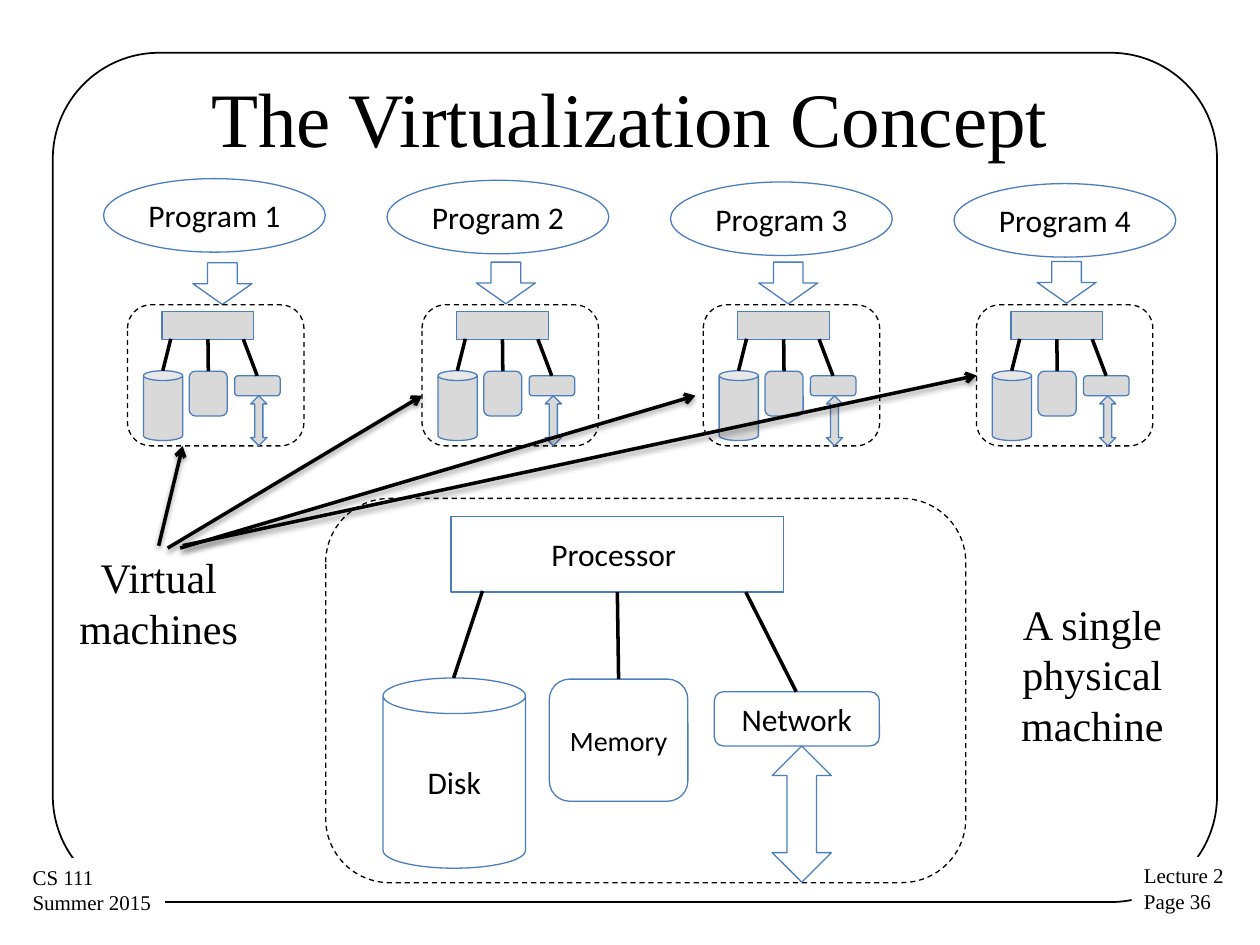
from dataclasses import dataclass

from lxml import etree
from pptx import Presentation
from pptx.dml.color import RGBColor
from pptx.enum.dml import MSO_LINE
from pptx.enum.shapes import MSO_CONNECTOR, MSO_SHAPE
from pptx.enum.text import MSO_ANCHOR, PP_ALIGN
from pptx.oxml.ns import qn
from pptx.util import Pt

RECT, ROUND = MSO_SHAPE.RECTANGLE, MSO_SHAPE.ROUNDED_RECTANGLE
OVAL, CAN = MSO_SHAPE.OVAL, MSO_SHAPE.CAN
DOWN, UP_DOWN = MSO_SHAPE.DOWN_ARROW, MSO_SHAPE.UP_DOWN_ARROW
STRAIGHT, DASH = MSO_CONNECTOR.STRAIGHT, MSO_LINE.DASH
LEFT, CENTER = PP_ALIGN.LEFT, PP_ALIGN.CENTER
MIDDLE, TOP = MSO_ANCHOR.MIDDLE, MSO_ANCHOR.TOP

BLACK = RGBColor(0x00, 0x00, 0x00)
WHITE = RGBColor(0xFF, 0xFF, 0xFF)
GRAY = RGBColor(0xD9, 0xD9, 0xD9)
BLUE = RGBColor(0x4B, 0x7E, 0xBC)
SERIF, SANS = "Times New Roman", "Calibri"


@dataclass(frozen=True)
class Part:
    kind: int
    x: float
    y: float
    w: float
    h: float
    label: str = ""
    size: float = 18


@dataclass(frozen=True)
class VirtualMachine:
    x: float
    down_arrow_x: float
    down_arrow_y: float


# Machine parts, measured from the top left of the physical machine
MACHINE_W, MACHINE_H = 365.8, 219.6
PARTS = [
    Part(RECT, 71.6, 10.4, 190.1, 43.2, "Processor "),
    Part(ROUND, 127.8, 103.3, 79.2, 69.8, "Memory ", 16),
    Part(CAN, 32.8, 102.6, 81.4, 108.7, "Disk"),
    Part(ROUND, 222.1, 110.5, 94.3, 31, "Network"),
    Part(UP_DOWN, 255.2, 141.5, 33.8, 77.8),
]
BUSES = [(166.7, 53.6, 167.4, 103.3), (89.6, 52.9, 73.1, 102.6),
         (240.1, 53.6, 268.9, 110.5)]

VM_Y, VM_W, VM_H = 174.2, 100.8, 80.6
VMS = [VirtualMachine(72.9, 110.2, 150.2), VirtualMachine(241.2, 272.2, 149.8),
       VirtualMachine(401.9, 433.6, 149.8), VirtualMachine(558, 592.6, 149.5)]
POINTERS = [(90.7, 311.8, 104.4, 254.9), (95.8, 313.2, 241.2, 226.1),
            (103, 313.2, 397.4, 226.1), (104.4, 311.8, 558, 214.6)]


def write(tf, lines: list[str], size: float, font: str, align: int, anchor: int) -> None:
    tf.word_wrap = True
    tf.vertical_anchor = anchor
    for i, line in enumerate(lines):
        p = tf.paragraphs[0] if i == 0 else tf.add_paragraph()
        p.alignment = align
        r = p.add_run()
        r.text = line
        r.font.size = Pt(size)
        r.font.name = font
        r.font.color.rgb = BLACK


def draw_shape(s, part: Part, fill=WHITE, line=BLUE, width: float = 0.75):
    sp = s.shapes.add_shape(part.kind, Pt(part.x), Pt(part.y), Pt(part.w), Pt(part.h))
    sp.shadow.inherit = False
    if fill is None:
        sp.fill.background()
    else:
        sp.fill.solid()
        sp.fill.fore_color.rgb = fill
    if line is None:
        sp.line.fill.background()
    else:
        sp.line.color.rgb = line
        sp.line.width = Pt(width)
    if part.label:
        write(sp.text_frame, [part.label], part.size, SANS, CENTER, MIDDLE)
    return sp


def draw_line(s, x1: float, y1: float, x2: float, y2: float, pointer: bool = False) -> None:
    c = s.shapes.add_connector(STRAIGHT, Pt(x1), Pt(y1), Pt(x2), Pt(y2))
    c.line.color.rgb = BLACK
    c.line.width = Pt(2)
    sp_pr = c._element.spPr
    effects = etree.SubElement(sp_pr, qn("a:effectLst"))
    if pointer:
        etree.SubElement(sp_pr.find(qn("a:ln")), qn("a:tailEnd"), type="arrow")
        shadow = etree.SubElement(effects, qn("a:outerShdw"), blurRad=str(Pt(3.1)),
                                  dist=str(Pt(1.6)), dir="5400000", rotWithShape="0")
        color = etree.SubElement(shadow, qn("a:srgbClr"), val=str(BLACK))
        etree.SubElement(color, qn("a:alpha"), val="38000")


def draw_machine(s, x: float, y: float, w: float, h: float, fill: RGBColor,
                 labelled: bool) -> None:
    kx, ky = w / MACHINE_W, h / MACHINE_H
    frame = draw_shape(s, Part(ROUND, x, y, w, h), None, BLACK)
    frame.line.dash_style = DASH
    for part in PARTS:
        draw_shape(s, Part(part.kind, x + part.x * kx, y + part.y * ky, part.w * kx,
                           part.h * ky, part.label if labelled else "", part.size), fill)
    for x1, y1, x2, y2 in BUSES:
        draw_line(s, x + x1 * kx, y + y1 * ky, x + x2 * kx, y + y2 * ky)


def draw_footer(s, x: float, y: float, w: float, lines: list[str]) -> None:
    sp = draw_shape(s, Part(RECT, x, y, w, 36.7), WHITE, None)
    write(sp.text_frame, lines, 12, SERIF, LEFT, TOP)
    sp.text_frame.word_wrap = False


def draw_caption(s, x: float, y: float, w: float, h: float, text: str) -> None:
    tb = s.shapes.add_textbox(Pt(x), Pt(y), Pt(w), Pt(h))
    write(tb.text_frame, [text], 24, SERIF, CENTER, TOP)


def main() -> None:
    prs = Presentation()
    prs.slide_width, prs.slide_height = Pt(720), Pt(540)
    s = prs.slides.add_slide(prs.slide_layouts[5])

    # Page frame and footers
    border = draw_shape(s, Part(ROUND, 30.2, 30.2, 665.3, 485.3), None, BLACK, 1)
    border.adjustments[0] = 0.125
    draw_footer(s, 646.6, 489.6, 60.5, ["Lecture 2", "Page 36"])
    draw_footer(s, 11.5, 490.3, 82.8, ["CS 111", "Summer 2015"])

    # Title
    title = s.shapes.title
    title.left, title.top, title.width, title.height = Pt(36), Pt(21.6), Pt(648), Pt(90)
    write(title.text_frame, ["The Virtualization Concept"], 44, SERIF, CENTER, MIDDLE)

    # Physical machine
    draw_machine(s, 186.1, 284.8, MACHINE_W, MACHINE_H, WHITE, True)

    # Programs, each on its own virtual machine
    for i, vm in enumerate(VMS):
        draw_shape(s, Part(OVAL, 59.2 + 162 * i, 102.1 + 0.95 * i, 126.7, 42,
                           f"Program {i + 1}"))
        draw_shape(s, Part(DOWN, vm.down_arrow_x, vm.down_arrow_y, 33.8, 23.8))
        draw_machine(s, vm.x, VM_Y, VM_W, VM_H, GRAY, False)

    # Captions and pointers
    draw_caption(s, 36, 311.8, 109.4, 65.5, "Virtual machines ")
    for ends in POINTERS:
        draw_line(s, *ends, pointer=True)
    draw_caption(s, 569.5, 338.4, 109.4, 94.3, "A single physical machine")

    prs.save("out.pptx")


if __name__ == "__main__":
    main()
